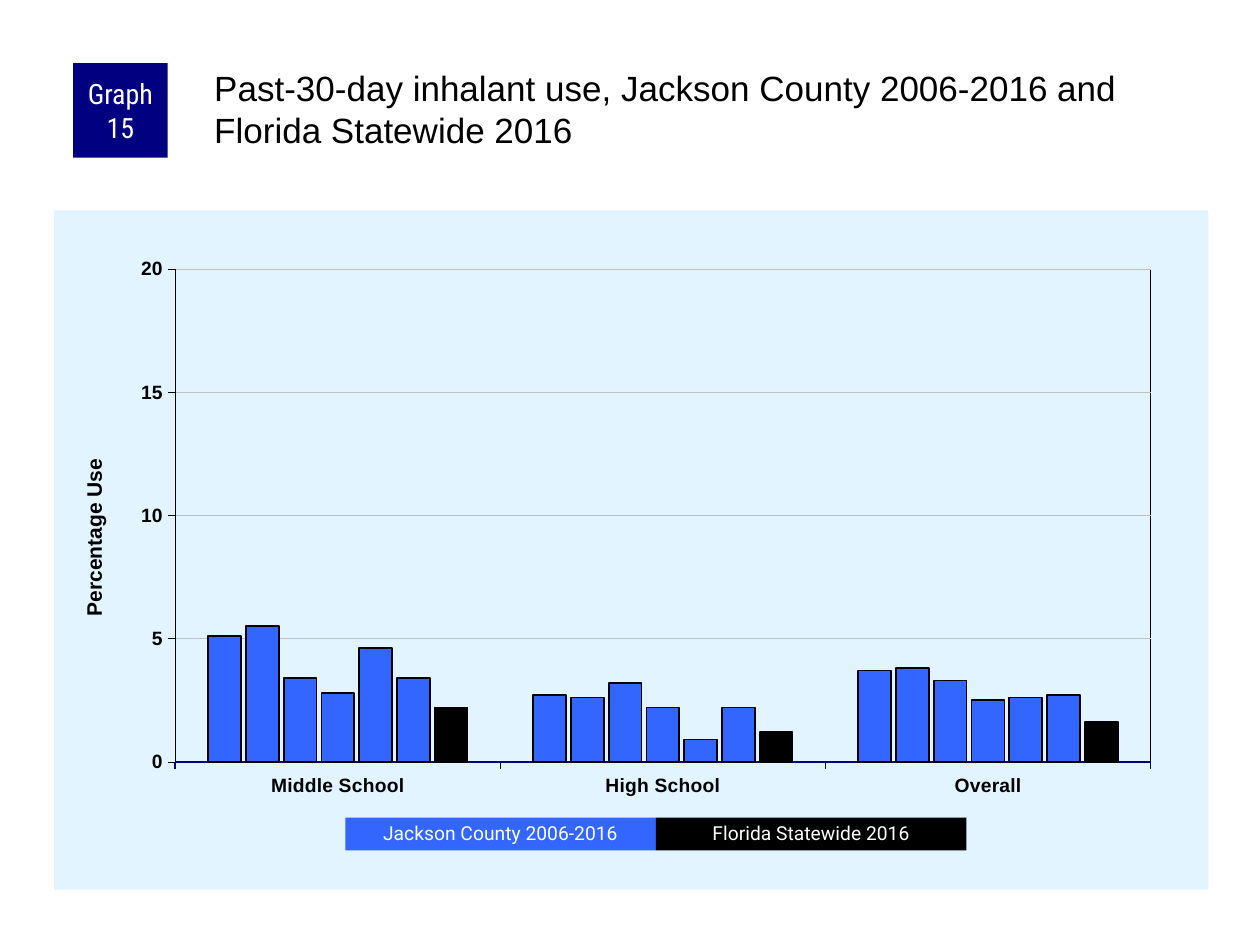
"""Build the slide charting past-30-day inhalant use by school level."""
from lxml import etree
from pptx import Presentation, util as u
from pptx.chart import data
from pptx.dml.color import RGBColor
from pptx.enum import chart as charts, shapes, text
from pptx.oxml import parse_xml
from pptx.oxml.ns import nsdecls, qn

NAVY = RGBColor(0x00, 0x00, 0x80)
BLUE = RGBColor(0x33, 0x66, 0xFF)
PALE = RGBColor(0xE1, 0xF4, 0xFF)
GREY = RGBColor(0xC0, 0xC0, 0xC0)
BLACK = RGBColor(0x00, 0x00, 0x00)
WHITE = RGBColor(0xFF, 0xFF, 0xFF)

presentation = Presentation()
presentation.slide_width, presentation.slide_height = u.Inches(10), u.Inches(7.5)
slide = presentation.slides.add_slide(presentation.slide_layouts[6])


def place(left, top, width, height):
    """Turn percentages of the slide into lengths."""
    across, down = presentation.slide_width / 100, presentation.slide_height / 100
    return [int(n) for n in (left * across, top * down, width * across, height * down)]


def write_text(words, box, font, size, color=WHITE, fill=None, insets=(0.1, 0.05, 0.1, 0.05),
               align=text.PP_ALIGN.CENTER, anchor=text.MSO_ANCHOR.MIDDLE, spacing=None):
    """Add text in a filled rectangle, or in a plain text box without a fill."""
    if fill is None:
        shape = slide.shapes.add_textbox(*place(*box))
    else:
        shape = slide.shapes.add_shape(shapes.MSO_SHAPE.RECTANGLE, *place(*box))
        shape.shadow.inherit = False
        shape.fill.solid()
        shape.fill.fore_color.rgb = fill
        shape.line.fill.background()
    frame = shape.text_frame
    frame.word_wrap = True
    frame.vertical_anchor = anchor
    frame.margin_left, frame.margin_top, frame.margin_right, frame.margin_bottom = map(u.Inches, insets)
    paragraph = frame.paragraphs[0]
    paragraph.alignment, paragraph.line_spacing = align, spacing
    run = paragraph.add_run()
    run.text = words
    run.font.name, run.font.size, run.font.color.rgb = font, u.Pt(size), color


survey = data.CategoryChartData()
survey.categories = ["Middle School", "High School", "Overall"]
rates = [(5.1, 2.7, 3.7), (5.5, 2.6, 3.8), (3.4, 3.2, 3.3), (2.8, 2.2, 2.5),
         (4.6, 0.9, 2.6), (3.4, 2.2, 2.7), (2.2, 1.2, 1.6)]
for number, values in enumerate(rates, 1):
    survey.add_series(f"Series {number}", values)

chart = slide.shapes.add_chart(charts.XL_CHART_TYPE.COLUMN_CLUSTERED,
                               *place(4.3, 22.27, 91.6, 71.87), survey).chart
chart.has_title = chart.has_legend = False
chart.font.name, chart.font.size, chart.font.color.rgb = "Arial", u.Pt(8), BLACK

plot = chart.plots[0]
plot.gap_width, plot.overlap, plot.vary_by_categories = 200, -15, False
for series in plot.series:
    series.invert_if_negative = False
    series.format.fill.solid()
    series.format.fill.fore_color.rgb = BLUE
    series.format.line.color.rgb = BLACK
    series.format.line.width = u.Pt(1)
plot.series[-1].format.fill.fore_color.rgb = BLACK

for axis, color, width in ((chart.category_axis, NAVY, 1), (chart.value_axis, BLACK, 0.25)):
    axis.major_tick_mark = charts.XL_TICK_MARK.OUTSIDE
    axis.format.line.color.rgb, axis.format.line.width = color, u.Pt(width)
    font = axis.tick_labels.font
    font.name, font.size, font.bold, font.color.rgb = "Arial", u.Pt(11), True, BLACK

value_axis = chart.value_axis
value_axis.minimum_scale, value_axis.maximum_scale, value_axis.major_unit = 0, 20, 5
value_axis.major_gridlines.format.line.color.rgb = GREY
value_axis.major_gridlines.format.line.width = u.Pt(0.25)
title_frame = value_axis.axis_title.text_frame
title_frame.text = "Percentage Use"
font = title_frame.paragraphs[0].runs[0].font
font.name, font.size, font.bold, font.color.rgb = "Arial", u.Pt(12), True, BLACK

chart_element = chart.element.find(qn("c:chart"))
plot_area = chart_element.find(qn("c:plotArea"))
axis_title = next(plot_area.iter(qn("c:title")))
plot_layout = {"layoutTarget": "inner", "xMode": "edge", "yMode": "edge",
               "x": 0.105, "y": 0.086, "w": 0.845, "h": 0.726}
title_layout = {"xMode": "edge", "yMode": "edge", "x": 0.02, "y": 0.36}
for owner, position, settings in ((plot_area, 0, plot_layout), (axis_title, 1, title_layout)):
    for previous in owner.findall(qn("c:layout")):
        owner.remove(previous)
    layout = etree.Element(qn("c:layout"))
    manual = etree.SubElement(layout, qn("c:manualLayout"))
    for name, value in settings.items():
        etree.SubElement(manual, qn(f"c:{name}")).set("val", str(value))
    owner.insert(position, layout)

plot_area.append(parse_xml(
    f'<c:spPr {nsdecls("c", "a")}><a:noFill/><a:ln w="3175"><a:solidFill>'
    f'<a:srgbClr val="{BLACK}"/></a:solidFill></a:ln></c:spPr>'))
chart_element.addnext(parse_xml(
    f'<c:spPr {nsdecls("c", "a")}><a:solidFill><a:srgbClr val="{PALE}"/></a:solidFill>'
    '<a:ln><a:noFill/></a:ln></c:spPr>'))

write_text("Graph 15", (5.8, 6.67, 7.5, 10), "Roboto Condensed", 16, fill=NAVY,
           insets=(0.05, 0, 0.05, 0))
write_text("Past-30-day inhalant use, Jackson County 2006-2016 and Florida Statewide 2016",
           (16.7, 6.67, 79.2, 11.07), "Arial", 20, color=BLACK, insets=(0.03, 0.03, 0, 0),
           align=text.PP_ALIGN.LEFT, anchor=text.MSO_ANCHOR.TOP)
for column, (label, fill) in enumerate((("Jackson County 2006-2016", BLUE),
                                        ("Florida Statewide 2016", BLACK))):
    write_text(label, (27.4 + 24.65 * column, 86.53, 24.65, 3.47), "Roboto", 11,
               fill=fill, spacing=0.9)

presentation.save("out.pptx")
